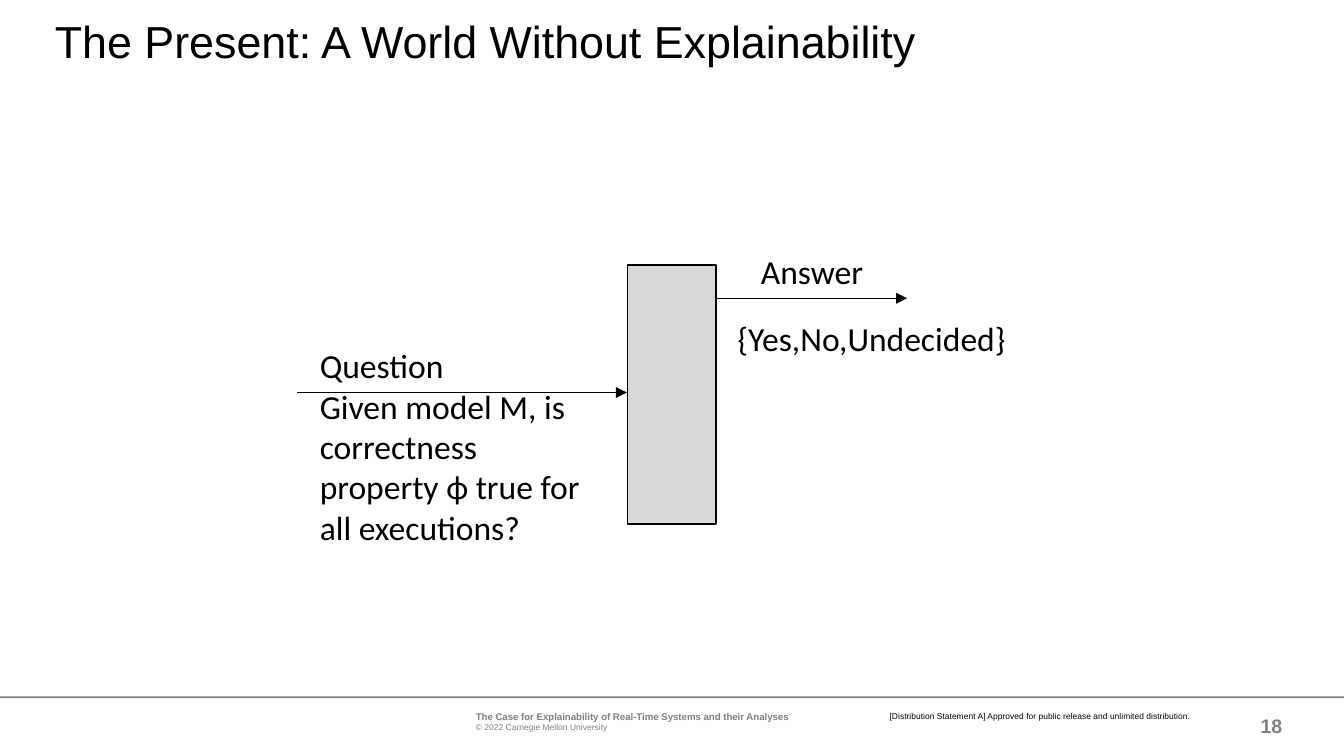
import pptx
import pptx.util
import pptx.dml.color
import pptx.enum.shapes
import pptx.enum.text
import pptx.oxml.ns
import lxml.etree

Pt = pptx.util.Pt
RGB = pptx.dml.color.RGBColor
BLACK = RGB(0x00, 0x00, 0x00)
GRAY = RGB(0x80, 0x80, 0x80)
LIGHT = RGB(0xD9, 0xD9, 0xD9)
ALIGN = pptx.enum.text.PP_ALIGN
RECT = pptx.enum.shapes.MSO_SHAPE.RECTANGLE
STRAIGHT = pptx.enum.shapes.MSO_CONNECTOR.STRAIGHT
qn = pptx.oxml.ns.qn

deck = pptx.Presentation()
deck.slide_width, deck.slide_height = Pt(720), Pt(405)
slide = deck.slides.add_slide(deck.slide_layouts[6])
shapes = slide.shapes


def add_text(text, box, size, face="Calibri", color=BLACK, align=ALIGN.LEFT, inset=None):
    frame = shapes.add_textbox(*map(Pt, box)).text_frame
    frame.word_wrap = True
    if inset is not None:
        frame.margin_left = frame.margin_top = frame.margin_bottom = 0
        frame.margin_right = Pt(inset)
    frame.text = text
    for para in frame.paragraphs:
        para.alignment = align
        for run in para.runs:
            run.font.name = face
            run.font.size = Pt(size)
            run.font.color.rgb = color
    return frame


def add_arrow(left, right, y):
    arrow = shapes.add_connector(STRAIGHT, Pt(left), Pt(y), Pt(right), Pt(y))
    arrow.line.color.rgb = BLACK
    arrow.line.width = Pt(0.5)
    props = arrow._element.spPr
    lxml.etree.SubElement(props.find(qn("a:ln")), qn("a:tailEnd"), type="triangle")
    lxml.etree.SubElement(props, qn("a:effectLst"))


number = add_text("18", (655.2, 378, 31.7, 21.6), 10.5, "Arial", GRAY, ALIGN.RIGHT, 0)
number.vertical_anchor = pptx.enum.text.MSO_ANCHOR.MIDDLE
number.paragraphs[0].runs[0].font.bold = True

footer = add_text(
    "The Case for Explainability of Real-Time Systems and their Analyses\n"
    "© 2022 Carnegie Mellon University",
    (254.9, 380.9, 210.2, 11.5), 4.5, "Arial", GRAY, inset=2.9)
talk = footer.paragraphs[0].runs[0].font
talk.size = Pt(5.2)
talk.bold = True

add_text("[Distribution Statement A] Approved for public release and unlimited distribution.",
         (476.6, 380.9, 164.9, 5.8), 4.5, "Arial", inset=0)

rule = shapes.add_shape(RECT, 0, Pt(373), Pt(720), Pt(1))
rule.shadow.inherit = False
rule.fill.solid()
rule.fill.fore_color.rgb = GRAY
rule.line.fill.background()

title = add_text("The Present: A World Without Explainability",
                 (22.3, 7.2, 666, 33.1), 24, "Arial")
title.paragraphs[0].line_spacing = 0.9

system = shapes.add_shape(RECT, Pt(336.2), Pt(141.8), Pt(47.5), Pt(139))
system.shadow.inherit = False
system.fill.solid()
system.fill.fore_color.rgb = LIGHT
system.line.color.rgb = BLACK
system.line.width = Pt(1)

add_text("Question\nGiven model M, is correctness property ϕ true for all executions?",
         (164.2, 181.4, 166.3, 116.6), 18)
add_arrow(159.1, 335.9, 210.3)

add_text("Answer", (384.2, 131, 101.5, 28.8), 18, align=ALIGN.CENTER)
add_arrow(384.2, 486, 159.8)
add_text("{Yes,No,Undecided}", (383.8, 167, 166.3, 28.8), 18, align=ALIGN.CENTER)

deck.save("out.pptx")
